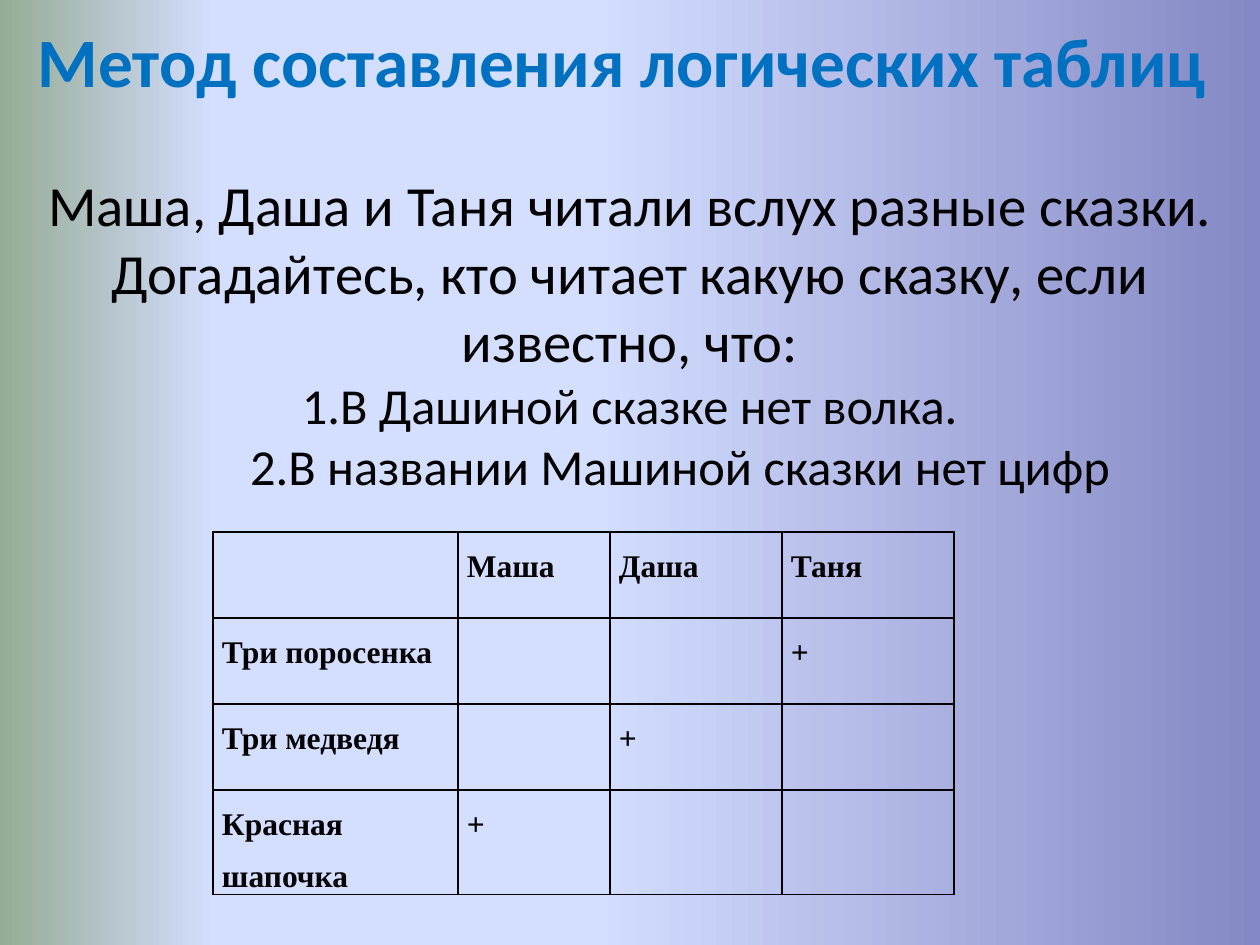
from dataclasses import dataclass

from lxml import etree
from pptx import Presentation
from pptx.dml.color import RGBColor
from pptx.enum.text import MSO_ANCHOR, MSO_AUTO_SIZE, PP_ALIGN
from pptx.oxml.ns import qn
from pptx.slide import Slide
from pptx.util import Pt

EMU_PER_PX = 914400 / 126
TITLE_ONLY = 5
MIDDLE = MSO_ANCHOR.MIDDLE
NO_AUTOFIT = MSO_AUTO_SIZE.NONE
CENTER = PP_ALIGN.CENTER
JUSTIFY = PP_ALIGN.JUSTIFY

BLUE = RGBColor(0x00, 0x70, 0xC0)
BLACK = RGBColor(0x00, 0x00, 0x00)
PERIWINKLE = RGBColor(0x84, 0x88, 0xC4)
PALE_BLUE = RGBColor(0xD4, 0xDE, 0xFF)
SAGE = RGBColor(0x96, 0xAB, 0x94)
BACKGROUND_STOPS = [(0, PERIWINKLE), (53, PALE_BLUE), (83, PALE_BLUE), (100, SAGE)]

HEADING = "Метод составления логических таблиц "
TASK = ("Маша, Даша и Таня читали вслух разные сказки. "
        "Догадайтесь, кто читает какую сказку, если известно, что:")
CLUES = ["1.В Дашиной сказке нет волка.", "2.В названии Машиной сказки нет цифр"]
ANSWERS = [
    ["", "Маша ", "Даша ", "Таня "],
    ["Три поросенка", "", "", "+"],
    ["Три медведя", "", "+", ""],
    ["Красная шапочка", "+", "", ""],
]


def px(length):
    return round(length * EMU_PER_PX)


def add_solid_fill(parent, color):
    fill = etree.SubElement(parent, qn("a:solidFill"))
    etree.SubElement(fill, qn("a:srgbClr"), val=str(color))


@dataclass
class Painter:
    page: Slide
    text_font: str = "Calibri"
    table_font: str = "Times New Roman"

    def background(self, stops, angle):
        fill = self.page.background.fill
        fill.gradient()
        fill.gradient_angle = angle
        stop_list = self.page.element.find(".//" + qn("a:gsLst"))
        for old_stop in list(stop_list):
            stop_list.remove(old_stop)
        for percent, color in stops:
            stop = etree.SubElement(stop_list, qn("a:gs"), pos=str(percent * 1000))
            etree.SubElement(stop, qn("a:srgbClr"), val=str(color))

    def span(self, para, text, font, size, color=BLACK, bold=False):
        span = para.add_run()
        span.text = text
        span.font.name = font
        span.font.size = Pt(size)
        span.font.bold = bold
        span.font.color.rgb = color

    def title(self, left, top, width, height, lines, bottom_inset):
        """Fill the title with (text, size, color, bold, space after, indent) lines."""
        box = self.page.shapes.title
        box.left, box.top, box.width, box.height = map(px, (left, top, width, height))
        frame = box.text_frame
        frame.word_wrap = True
        frame.auto_size = NO_AUTOFIT
        frame.vertical_anchor = MIDDLE
        frame.margin_bottom = px(bottom_inset)
        for index, (text, size, color, bold, gap, indent) in enumerate(lines):
            para = frame.add_paragraph() if index else frame.paragraphs[0]
            para.alignment = CENTER
            para.space_after = px(gap)
            para._p.get_or_add_pPr().set("marL", str(px(indent)))
            self.span(para, text, self.text_font, size, color, bold)

    def borders(self, cell, color, width):
        properties = cell._tc.get_or_add_tcPr()
        for position, side in enumerate(("lnL", "lnR", "lnT", "lnB")):
            line = etree.Element(qn("a:" + side), w=str(Pt(width)))
            add_solid_fill(line, color)
            properties.insert(position, line)

    def table(self, left, top, columns, rows, texts):
        frame = self.page.shapes.add_table(
            len(rows), len(columns), px(left), px(top), px(sum(columns)), px(sum(rows)))
        table = frame.table
        table.first_row = table.horz_banding = False
        for column, width in zip(table.columns, columns):
            column.width = px(width)
        for row, height, row_texts in zip(table.rows, rows, texts):
            row.height = px(height)
            for cell, text in zip(row.cells, row_texts):
                self.cell(cell, text)

    def cell(self, cell, text):
        cell.fill.background()
        self.borders(cell, BLACK, 1)
        cell.margin_left = cell.margin_right = px(9)
        cell.margin_top = cell.margin_bottom = 0
        if text:
            para = cell.text_frame.paragraphs[0]
            para.alignment = JUSTIFY
            para.line_spacing = 1.5
            para.space_before = Pt(1.2)
            para.space_after = Pt(10)
            self.span(para, text, self.table_font, 18, bold=True)


def main():
    deck = Presentation()
    deck.slide_width, deck.slide_height = px(1260), px(945)
    painter = Painter(deck.slides.add_slide(deck.slide_layouts[TITLE_ONLY]))
    painter.background(BACKGROUND_STOPS, 180)
    painter.title(0, 0, 1260, 582, [
        (HEADING, 39.6, BLUE, True, 69, 0),
        (TASK, 32.4, BLACK, False, 0, 0),
        (CLUES[0], 28.8, BLACK, False, 0, 0),
        (CLUES[1], 28.8, BLACK, False, 0, 101),
    ], bottom_inset=75)
    painter.table(213, 532, [245, 152, 172, 172], [86, 86, 86, 90], ANSWERS)
    deck.save("out.pptx")


if __name__ == "__main__":
    main()
